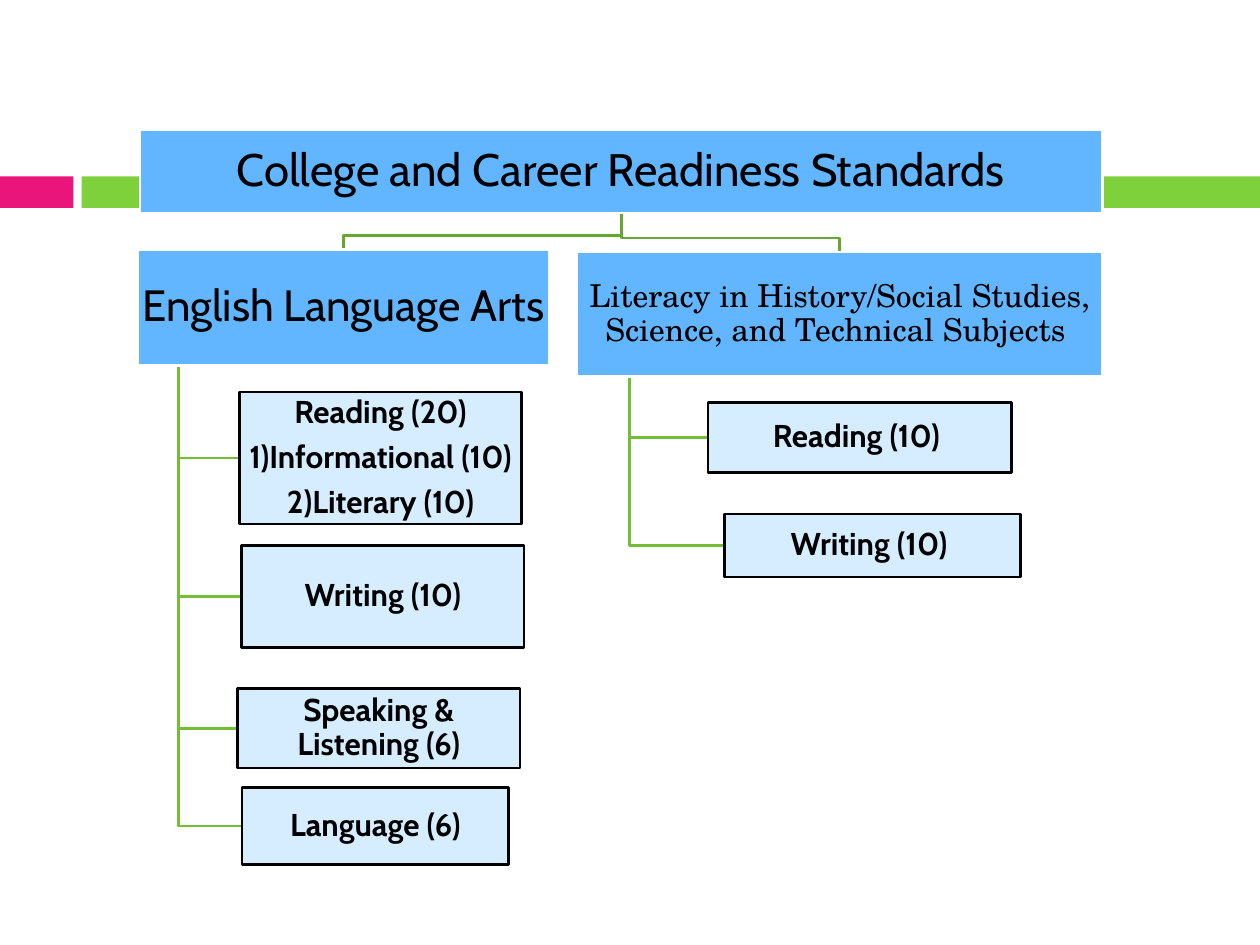
from pptx import Presentation
from pptx.dml.color import RGBColor
from pptx.enum.shapes import MSO_SHAPE
from pptx.enum.text import MSO_ANCHOR, PP_ALIGN
from pptx.util import Pt

RECT = MSO_SHAPE.RECTANGLE
MIDDLE = MSO_ANCHOR.MIDDLE
CENTER = PP_ALIGN.CENTER

PINK = RGBColor(0xEA, 0x15, 0x7A)
GREEN = RGBColor(0x7F, 0xD1, 0x3B)
TRUNK_GREEN = RGBColor(0x66, 0xA7, 0x2F)
BRANCH_GREEN = RGBColor(0x73, 0xBE, 0x36)
BLUE = RGBColor(0x61, 0xB6, 0xFF)
PALE_BLUE = RGBColor(0xD6, 0xEC, 0xFF)
WHITE = RGBColor(0xFF, 0xFF, 0xFF)
BLACK = RGBColor(0, 0, 0)

SANS = "Cabin"
SERIF = "TeX Gyre Schola"
LINE_WIDTH = 1.5
TURN_GAP = 8  # height of the trunk's last leg above a strand

# Boxes: (left, top, width, height) in points
ROOT = ("College and Career Readiness Standards", (80, 74.2, 550, 47.5), 26, SANS)
STRANDS = [
    (("English Language Arts ", (78.5, 142.6, 235.4, 66.2), 25, SANS), [
        ("Reading (20)\n1)Informational (10)\n2)Literary (10)",
         (136.8, 223.9, 161.3, 75.6)),
        ("Writing (10)", (138.2, 311.8, 161.3, 58.3)),
        ("Speaking & Listening (6)", (135.8, 393.5, 161.3, 45.4)),
        ("Language (6)", (138.2, 450, 152.6, 43.9)),
    ]),
    (("Literacy in History/Social Studies, Science, and Technical Subjects ",
      (329.8, 144, 300.2, 71.3), 18, SERIF), [
        ("Reading (10) ", (404.6, 230.2, 173.5, 39.8)),
        ("Writing (10) ", (414, 293.8, 169.2, 36)),
    ]),
]


def add_rect(slide, box, fill):
    sp = slide.shapes.add_shape(RECT, *map(Pt, box))
    sp.shadow.inherit = False
    sp.fill.solid()
    sp.fill.fore_color.rgb = fill
    sp.line.fill.background()
    return sp


def add_box(slide, text, box, size, font, fill, border, bold=False):
    sp = add_rect(slide, box, fill)
    sp.line.color.rgb = border
    sp.line.width = Pt(LINE_WIDTH)
    tf = sp.text_frame
    tf.word_wrap = True
    tf.vertical_anchor = MIDDLE
    tf.margin_left = tf.margin_right = tf.margin_top = tf.margin_bottom = Pt(1)
    tf.text = text
    for p in tf.paragraphs:
        p.alignment = CENTER
        p.line_spacing = 0.9
        p.space_after = Pt(0.35 * size)
        for r in p.runs:
            r.font.name = font
            r.font.size = Pt(size)
            r.font.bold = bold
            r.font.color.rgb = BLACK


def add_elbow(slide, points, color):
    start, *rest = [(Pt(x), Pt(y)) for x, y in points]
    builder = slide.shapes.build_freeform(*start)
    builder.add_line_segments(rest, close=False)
    sp = builder.convert_to_shape()
    sp.shadow.inherit = False
    sp.fill.background()
    sp.line.color.rgb = color
    sp.line.width = Pt(LINE_WIDTH)


def add_trunk(slide, parent, child):
    """Line from the parent's bottom centre to the child's top centre."""
    x, y = parent[0] + parent[2] / 2, parent[1] + parent[3]
    end_x, end_y = child[0] + child[2] / 2, child[1]
    turn = end_y - TURN_GAP
    add_elbow(slide, [(x, y), (x, turn), (end_x, turn), (end_x, end_y)], TRUNK_GREEN)


def add_branch(slide, parent, child):
    """Line from a tenth along the parent's bottom to the child's left side."""
    x, y = parent[0] + parent[2] / 10, parent[1] + parent[3]
    end_y = child[1] + child[3] / 2
    add_elbow(slide, [(x, y), (x, end_y), (child[0], end_y)], BRANCH_GREEN)


def main():
    prs = Presentation()
    prs.slide_width, prs.slide_height = Pt(720), Pt(540)
    slide = prs.slides.add_slide(prs.slide_layouts[6])

    # Band across the slide
    add_rect(slide, (0, 100.8, 42, 18), PINK)
    add_rect(slide, (46.6, 100.8, 673.4, 18), GREEN)

    # Connecting lines, behind the boxes
    for strand, topics in STRANDS:
        add_trunk(slide, ROOT[1], strand[1])
        for _, box in topics:
            add_branch(slide, strand[1], box)

    # Boxes
    add_box(slide, *ROOT, BLUE, WHITE)
    for strand, topics in STRANDS:
        add_box(slide, *strand, BLUE, WHITE)
        for text, box in topics:
            add_box(slide, text, box, 18, SANS, PALE_BLUE, BLACK, bold=True)

    prs.save("out.pptx")


if __name__ == "__main__":
    main()
